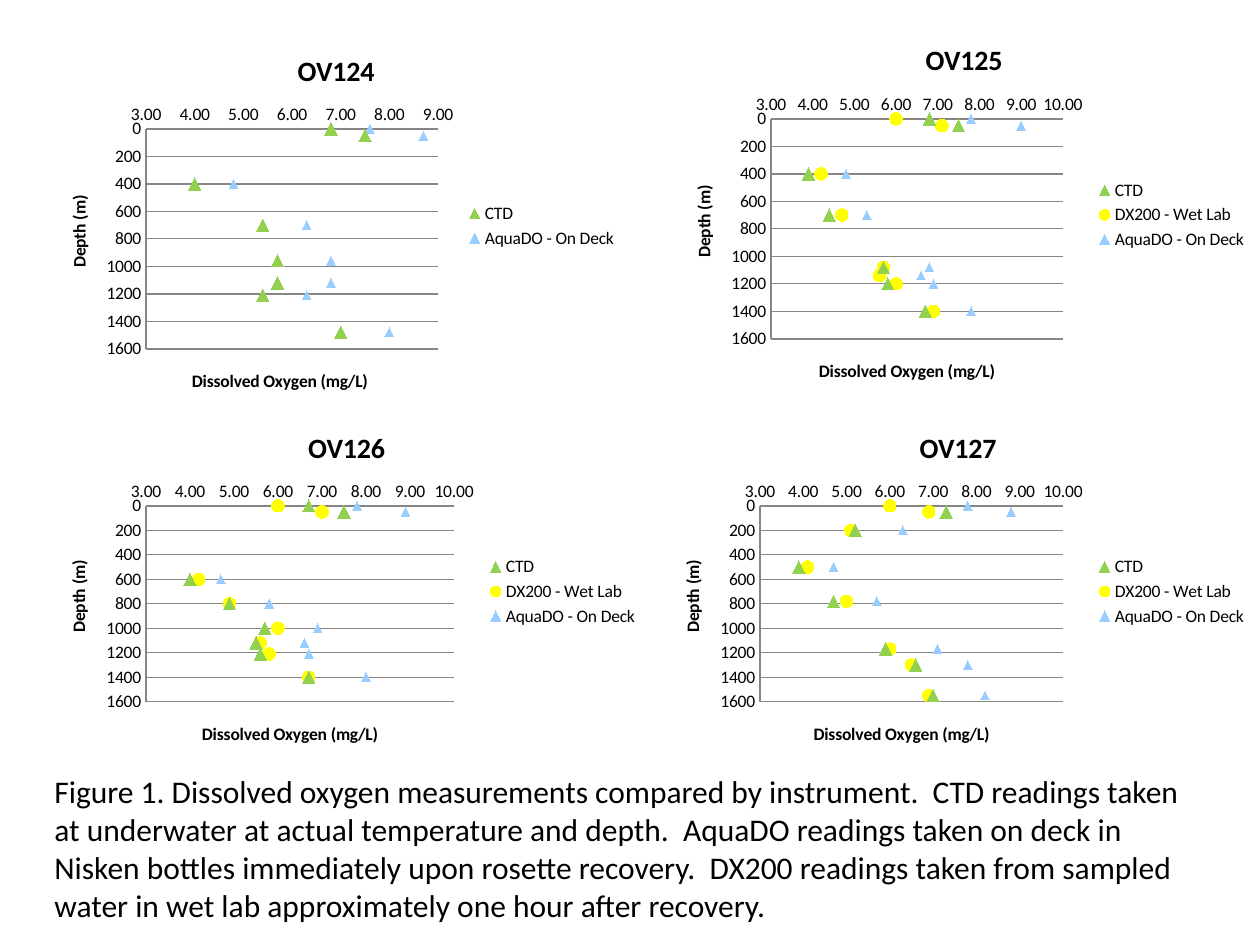
import pptx
import pptx.util
import pptx.chart.data
import pptx.dml.color
import pptx.enum.chart
import pptx.enum.text
import pptx.oxml

PX = pptx.util.Inches(1) / 126
FONT = "Calibri"
COLORS = {
    "text": "000000",
    "axis": "868686",
    "CTD": "92D050",
    "DX200 - Wet Lab": "FFFF00",
    "AquaDO - On Deck": "99CCFF",
}
STYLES = pptx.enum.chart.XL_MARKER_STYLE
MARKERS = {
    "CTD": (STYLES.TRIANGLE, 7),
    "DX200 - Wet Lab": (STYLES.CIRCLE, 7),
    "AquaDO - On Deck": (STYLES.TRIANGLE, 5),
}
CAPTION = (
    "Figure 1. Dissolved oxygen measurements compared by instrument.  "
    "CTD readings taken at underwater at actual temperature and depth.  "
    "AquaDO readings taken on deck in Nisken bottles immediately upon rosette recovery.  "
    "DX200 readings taken from sampled water in wet lab approximately one hour after recovery."
)
STATIONS = [
    {
        "title": "OV124", "box": (42, 32, 588, 388), "plot": (104, 97, 292, 220), "maximum": 9,
        "depths": [0, 50, 400, 700, 960, 1120, 1210, 1480],
        "readings": {
            "CTD": [6.8, 7.5, 4, 5.4, 5.7, 5.7, 5.4, 7],
            "AquaDO - On Deck": [7.6, 8.7, 4.8, 6.3, 6.8, 6.8, 6.3, 8],
        },
    },
    {
        "title": "OV125", "box": (668, 21, 592, 388), "plot": (103, 98, 292, 220), "maximum": 10,
        "depths": [0, 50, 400, 700, 1080, 1140, 1200, 1400],
        "readings": {
            "CTD": [6.8, 7.5, 3.9, 4.4, 5.7, None, 5.8, 6.7],
            "DX200 - Wet Lab": [6, 7.1, 4.2, 4.7, 5.7, 5.6, 6, 6.9],
            "AquaDO - On Deck": [7.8, 9, 4.8, 5.3, 6.8, 6.6, 6.9, 7.8],
        },
    },
    {
        "title": "OV126", "box": (42, 410, 609, 363), "plot": (104, 96, 308, 196), "maximum": 10,
        "depths": [0, 50, 600, 800, 1000, 1120, 1210, 1400],
        "readings": {
            "CTD": [6.7, 7.5, 4, 4.9, 5.7, 5.5, 5.6, 6.7],
            "DX200 - Wet Lab": [6, 7, 4.2, 4.9, 6, 5.6, 5.8, 6.7],
            "AquaDO - On Deck": [7.8, 8.9, 4.7, 5.8, 6.9, 6.6, 6.7, 8],
        },
    },
    {
        "title": "OV127", "box": (656, 410, 604, 363), "plot": (104, 96, 303, 196), "maximum": 10,
        "depths": [0, 50, 200, 500, 780, 1170, 1300, 1550],
        "readings": {
            "CTD": [None, 7.3, 5.2, 3.9, 4.7, 5.9, 6.6, 7],
            "DX200 - Wet Lab": [6, 6.9, 5.1, 4.1, 5, 6, 6.5, 6.9],
            "AquaDO - On Deck": [7.8, 8.8, 6.3, 4.7, 5.7, 7.1, 7.8, 8.2],
        },
    },
]


def emu(*lengths):
    return [round(length * PX) for length in lengths]


def rgb(name):
    return pptx.dml.color.RGBColor.from_string(COLORS[name])


def style_font(font, size, bold=False):
    font.name = FONT
    font.size = pptx.util.Pt(size)
    font.bold = bold
    font.color.rgb = rgb("text")


def add_run(text_frame, text, size, bold=False):
    run = text_frame.paragraphs[0].add_run()
    run.text = text
    style_font(run.font, size, bold)


def style_line(line):
    line.color.rgb = rgb("axis")
    line.width = pptx.util.Pt(0.75)


def style_axis(axis, title, limits, step, number_format):
    axis.minimum_scale, axis.maximum_scale = limits
    axis.major_unit = step
    axis.major_tick_mark = pptx.enum.chart.XL_TICK_MARK.NONE
    axis.minor_tick_mark = pptx.enum.chart.XL_TICK_MARK.NONE
    axis.tick_labels.number_format = number_format
    axis.tick_labels.number_format_is_linked = False
    style_font(axis.tick_labels.font, 10)
    style_line(axis.format.line)
    add_run(axis.axis_title.text_frame, title, 10, True)


def place_plot(chart, box, plot):
    plot_area = chart._chartSpace.chart.plotArea
    for layout in plot_area.xpath("c:layout"):
        plot_area.remove(layout)
    fractions = zip("xywh", (plot[0] / box[2], plot[1] / box[3], plot[2] / box[2], plot[3] / box[3]))
    values = "".join(f'<c:{key} val="{value:.4f}"/>' for key, value in fractions)
    plot_area.insert(0, pptx.oxml.parse_xml(
        '<c:layout xmlns:c="http://schemas.openxmlformats.org/drawingml/2006/chart">'
        '<c:manualLayout><c:layoutTarget val="inner"/><c:xMode val="edge"/><c:yMode val="edge"/>'
        f"{values}</c:manualLayout></c:layout>"
    ))


def add_station_chart(slide, box, station):
    chart_data = pptx.chart.data.XyChartData(number_format="0.0")
    for name, oxygen in station["readings"].items():
        series = chart_data.add_series(name)
        for reading, depth in zip(oxygen, station["depths"]):
            series.add_data_point(reading, depth)
    chart = slide.shapes.add_chart(
        pptx.enum.chart.XL_CHART_TYPE.XY_SCATTER, *emu(*box), chart_data
    ).chart
    for point in chart._chartSpace.xpath('.//c:pt[c:v="None"]'):
        point.getparent().remove(point)
    style_font(chart.font, 10)
    chart.has_title = True
    add_run(chart.chart_title.text_frame, station["title"], 16, True)

    style_axis(chart.category_axis, "Dissolved Oxygen (mg/L)", (3, station["maximum"]), 1, "0.00")
    chart.category_axis.has_major_gridlines = False
    depth_axis = chart.value_axis
    style_axis(depth_axis, "Depth (m)", (0, 1600), 200, "General")
    depth_axis.reverse_order = True
    depth_axis.has_major_gridlines = True
    style_line(depth_axis.major_gridlines.format.line)
    body = depth_axis.axis_title.text_frame._txBody.bodyPr
    body.set("rot", "-5400000")
    body.set("vert", "horz")

    chart.has_legend = True
    chart.legend.position = pptx.enum.chart.XL_LEGEND_POSITION.RIGHT
    chart.legend.include_in_layout = False
    style_font(chart.legend.font, 10)
    chart.plots[0].vary_by_categories = False
    for series in chart.plots[0].series:
        series.smooth = False
        series.format.line.fill.background()
        marker = series.marker
        marker.style, marker.size = MARKERS[series.name]
        marker.format.fill.solid()
        marker.format.fill.fore_color.rgb = rgb(series.name)
        marker.format.line.fill.background()
    place_plot(chart, box, station["plot"])


def add_caption(slide, box):
    text_frame = slide.shapes.add_textbox(*emu(*box)).text_frame
    text_frame.word_wrap = True
    text_frame.auto_size = pptx.enum.text.MSO_AUTO_SIZE.SHAPE_TO_FIT_TEXT
    add_run(text_frame, CAPTION, 18)


def main():
    presentation = pptx.Presentation()
    presentation.slide_width, presentation.slide_height = emu(1260, 945)
    slide = presentation.slides.add_slide(presentation.slide_layouts[6])
    add_caption(slide, (42, 766, 1176, 165))
    for station in STATIONS:
        add_station_chart(slide, station["box"], station)
    presentation.save("out.pptx")


if __name__ == "__main__":
    main()
